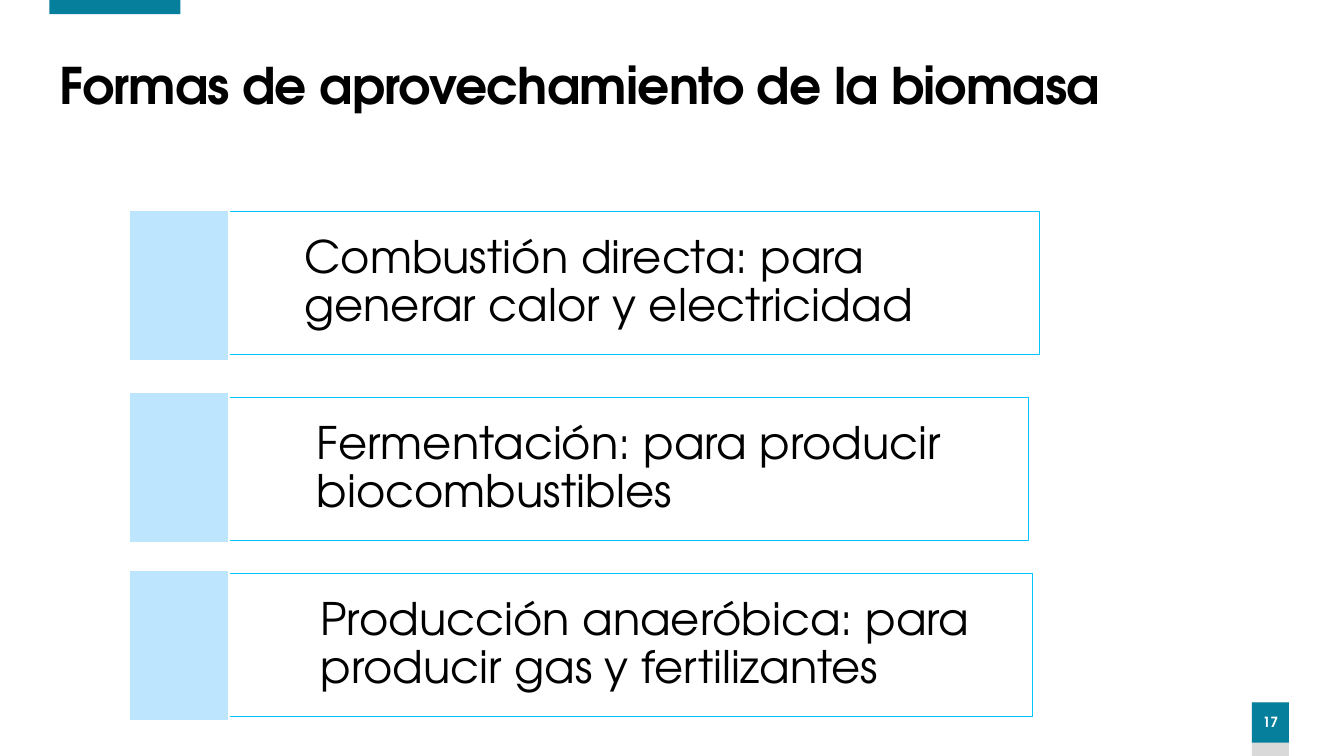
from dataclasses import dataclass

from lxml import etree
from pptx import Presentation
from pptx.dml.color import RGBColor
from pptx.enum import shapes, text
from pptx.oxml.ns import qn
from pptx.util import Pt

FONT = "TeX Gyre Adventor"
TEAL, GRAY, SKY, CYAN = "067F9C", "D9D9D9", "BDE5FE", "01C6FD"
WHITE, BLACK = "FFFFFF", "000000"


@dataclass
class Use:
    """One way of using biomass: a framed text with a square at its left."""
    wording: str
    left: float
    top: float
    width: float
    square_top: float


USES = [
    Use("Combustión directa: para generar calor y electricidad", 148.3, 151.2, 594, 150.5),
    Use("Fermentación: para producir biocombustibles", 157, 283.7, 577.4, 280.1),
    Use("Producción anaeróbica: para producir gas y fertilizantes", 159.8, 409.7, 577.4, 407.5),
]
CARD_HEIGHT = 102.2
SQUARE_LEFT, SQUARE_WIDTH, SQUARE_HEIGHT = 92.2, 71.3, 107.3


def paint(color_format, color: str) -> None:
    color_format.rgb = RGBColor.from_string(color)


def add_block(slide, left: float, top: float, width: float, height: float,
              fill: str, line: str = "", weight: float = 1):
    block = slide.shapes.add_shape(shapes.MSO_SHAPE.RECTANGLE,
                                   Pt(left), Pt(top), Pt(width), Pt(height))
    block.shadow.inherit = False
    block.fill.solid()
    paint(block.fill.fore_color, fill)
    if line:
        paint(block.line.color, line)
        block.line.width = Pt(weight)
    else:
        block.line.fill.background()
    return block


def write(shape, wording: str, size: float, color: str, insets: tuple,
          bold: bool = False, align=text.PP_ALIGN.LEFT):
    frame = shape.text_frame
    frame.word_wrap = True
    frame.vertical_anchor = text.MSO_ANCHOR.MIDDLE
    (frame.margin_left, frame.margin_top,
     frame.margin_right, frame.margin_bottom) = map(Pt, insets)
    paragraph = frame.paragraphs[0]
    paragraph.text = wording
    paragraph.alignment = align
    paragraph.line_spacing = 0.9
    paragraph.font.name = FONT
    paragraph.font.size = Pt(size)
    paragraph.font.bold = bold
    paint(paragraph.font.color, color)
    return paragraph


def add_use(slide, use: Use) -> None:
    card = add_block(slide, use.left, use.top, use.width, CARD_HEIGHT, WHITE, CYAN, 0.5)
    fill_color = card.fill._xPr.find(qn("a:solidFill"))[0]
    etree.SubElement(fill_color, qn("a:alpha")).set("val", "40000")
    write(card, use.wording, 32, BLACK, (69.1, 9.4, 9.4, 9.4))
    add_block(slide, SQUARE_LEFT, use.square_top, SQUARE_WIDTH, SQUARE_HEIGHT, SKY, WHITE)


def main() -> None:
    deck = Presentation()
    deck.slide_width, deck.slide_height = Pt(960), Pt(540)
    slide = deck.slides.add_slide(deck.slide_layouts[6])

    # Page number and top accent
    add_block(slide, 894.2, 501.8, 26.6, 38.2, GRAY)
    page_number = add_block(slide, 894.2, 501.8, 26.6, 28.8, TEAL)
    write(page_number, "17", 10, WHITE, (0, 3.6, 0, 3.6), True, text.PP_ALIGN.CENTER)
    add_block(slide, 35.3, 0, 93.6, 10.1, TEAL)

    # Title, with slightly tightened letters
    title = slide.shapes.add_textbox(Pt(35.3), Pt(39.6), Pt(879.8), Pt(46.8))
    heading = write(title, "Formas de aprovechamiento de la biomasa", 36, BLACK,
                    (7.2, 3.6, 7.2, 3.6), True)
    heading.runs[0]._r.get_or_add_rPr().set("spc", "-60")

    # Uses of biomass
    for use in USES:
        add_use(slide, use)

    deck.save("out.pptx")


if __name__ == "__main__":
    main()
